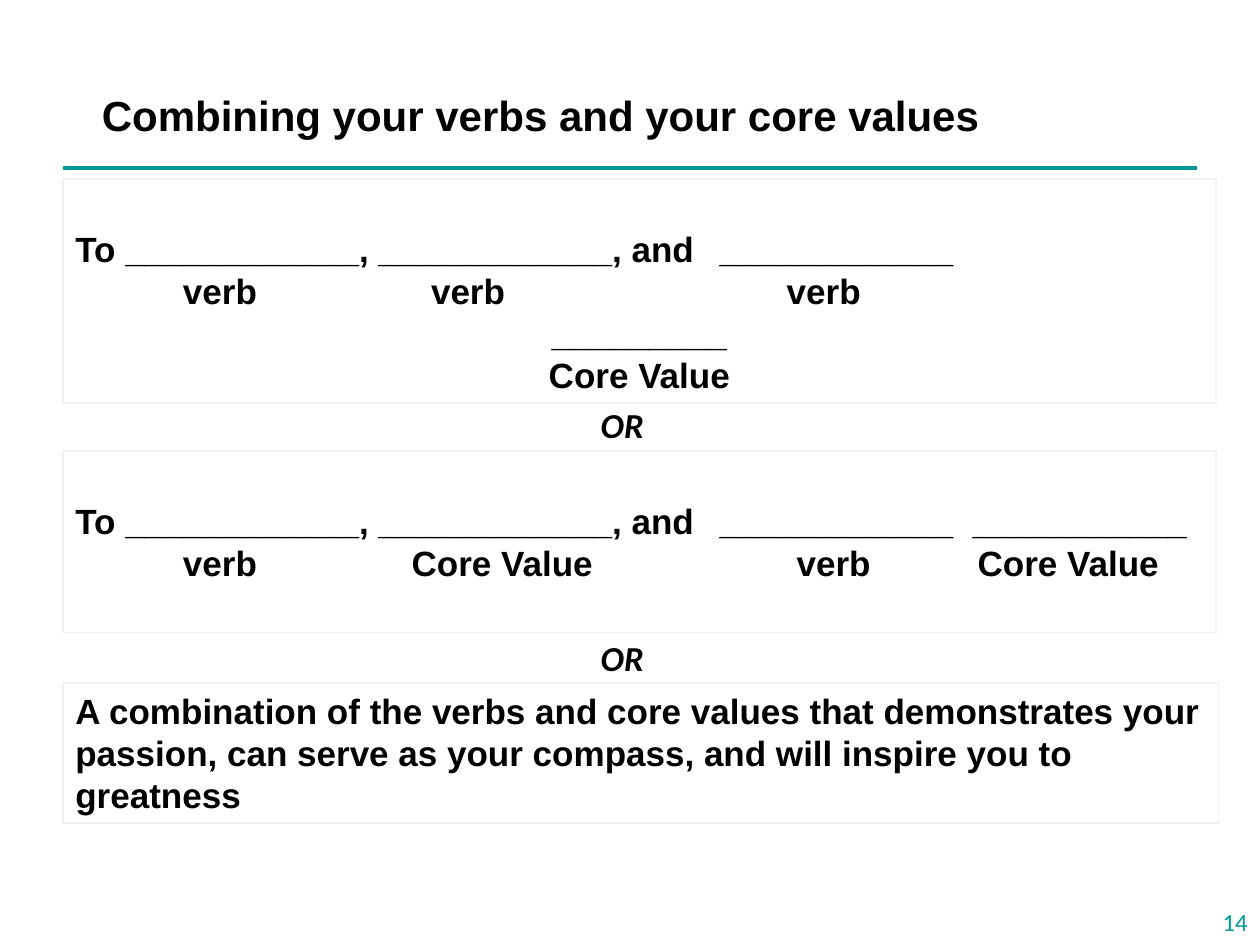
import pptx
import pptx.dml.color
import pptx.enum.shapes
import pptx.enum.text
import pptx.util
import lxml.etree
from pptx.enum.text import MSO_ANCHOR, PP_ALIGN
from pptx.oxml.ns import qn
from pptx.util import Cm, Pt

BODY = {"name": "Arial", "size": Pt(20), "bold": True}
TITLE = {**BODY, "size": Pt(24)}
SEPARATOR = {**BODY, "name": "Calibri", "italic": True}
NUMBER = {"name": "Calibri", "size": Pt(14)}

LEFT = 1.27
VERB_TAB = 2.17
BLANK_TAB = 12.79
BOX_LINE_PADDING = 0.97


def color(value):
    return pptx.dml.color.RGBColor.from_string(value)


def apply(target, values):
    for name, value in values.items():
        setattr(target, name, value)


class SlideBuilder:
    text_color = "000000"
    accent = "009999"
    border = "F2F2F2"

    def __init__(self, presentation):
        self.slide = presentation.slides.add_slide(presentation.slide_layouts[5])

    def fill_text(self, frame, lines, style, text_color=None, frame_format=None):
        apply(frame, {"word_wrap": True, "vertical_anchor": MSO_ANCHOR.TOP,
                      **(frame_format or {})})
        for index, (text, alignment, tabs) in enumerate(lines):
            paragraph = frame.paragraphs[0] if index == 0 else frame.add_paragraph()
            paragraph.alignment = alignment
            run = paragraph.add_run()
            run.text = text
            apply(run.font, style)
            run.font.color.rgb = color(text_color or self.text_color)
            if tabs:
                self.set_tabs(paragraph, tabs)

    def set_tabs(self, paragraph, positions):
        properties = paragraph._p.get_or_add_pPr()
        tab_list = lxml.etree.SubElement(properties, qn("a:tabLst"))
        for position in positions:
            lxml.etree.SubElement(tab_list, qn("a:tab"), pos=str(Cm(position)), algn="l")

    def title(self, text, left, top, width, height):
        shape = self.slide.shapes.title
        apply(shape, {"left": Cm(left), "top": Cm(top),
                      "width": Cm(width), "height": Cm(height)})
        self.fill_text(shape.text_frame, [(text, PP_ALIGN.LEFT, None)], TITLE,
                       frame_format={"vertical_anchor": MSO_ANCHOR.MIDDLE})
        shape.text_frame.paragraphs[0].line_spacing = 0.9

    def rule(self, left, right, top):
        line = self.slide.shapes.add_connector(
            pptx.enum.shapes.MSO_CONNECTOR.STRAIGHT, Cm(left), Cm(top), Cm(right), Cm(top))
        line.line.color.rgb = color(self.accent)
        line.line.width = Pt(2.25)
        lxml.etree.SubElement(line._element.spPr, qn("a:effectLst"))

    def box(self, lines, top, width, height, padding=0.13, line_width=1):
        shape = self.slide.shapes.add_shape(
            pptx.enum.shapes.MSO_SHAPE.RECTANGLE, Cm(LEFT), Cm(top), Cm(width), Cm(height))
        shape.shadow.inherit = False
        shape.fill.background()
        shape.line.color.rgb = color(self.border)
        shape.line.width = Pt(line_width)
        self.fill_text(shape.text_frame, lines, BODY,
                       frame_format={"margin_top": Cm(padding)})

    def label(self, text, left, top, width, height, style, alignment=PP_ALIGN.LEFT,
              text_color=None, frame_format=None):
        shape = self.slide.shapes.add_textbox(Cm(left), Cm(top), Cm(width), Cm(height))
        self.fill_text(shape.text_frame, [(text, alignment, None)], style,
                       text_color, frame_format)


def main():
    presentation = pptx.Presentation()
    presentation.slide_width = Cm(25.4)
    presentation.slide_height = Cm(19.05)
    builder = SlideBuilder(presentation)

    builder.rule(LEFT, 24.13, 3.38)
    builder.label("14", 18.95, 18.08, 6.45, 1.02, NUMBER, PP_ALIGN.RIGHT,
                  builder.accent, {"vertical_anchor": MSO_ANCHOR.MIDDLE})
    builder.title("Combining your verbs and your core values", 1.8, 0.18, 21.59, 4.39)

    left, center = PP_ALIGN.LEFT, PP_ALIGN.CENTER
    blanks = "To ____________, ____________, and\t ____________"
    builder.box([
        (blanks, left, [BLANK_TAB]),
        ("\tverb\tverb\tverb", left, [VERB_TAB, 7.17, 14.34]),
        ("_________", center, None),
        ("Core Value", center, None),
    ], 3.61, 23.24, 4.52, BOX_LINE_PADDING)
    builder.box([
        (blanks + "  ___________", left, [BLANK_TAB]),
        ("\tverb\tCore Value\tverb\tCore Value", left, [VERB_TAB, 6.78, 14.54, 18.19]),
    ], 9.09, 23.24, 3.66, BOX_LINE_PADDING)
    builder.box([
        ("A combination of the verbs and core values that demonstrates your passion, "
         "can serve as your compass, and will inspire you to greatness", left, None),
    ], 13.77, 23.29, 2.82, line_width=0.75)

    for top in (8, 12.7):
        builder.label("OR", 11.86, top, 1.4, 1.12, SEPARATOR,
                      frame_format={"word_wrap": False})

    presentation.save("out.pptx")


if __name__ == "__main__":
    main()
